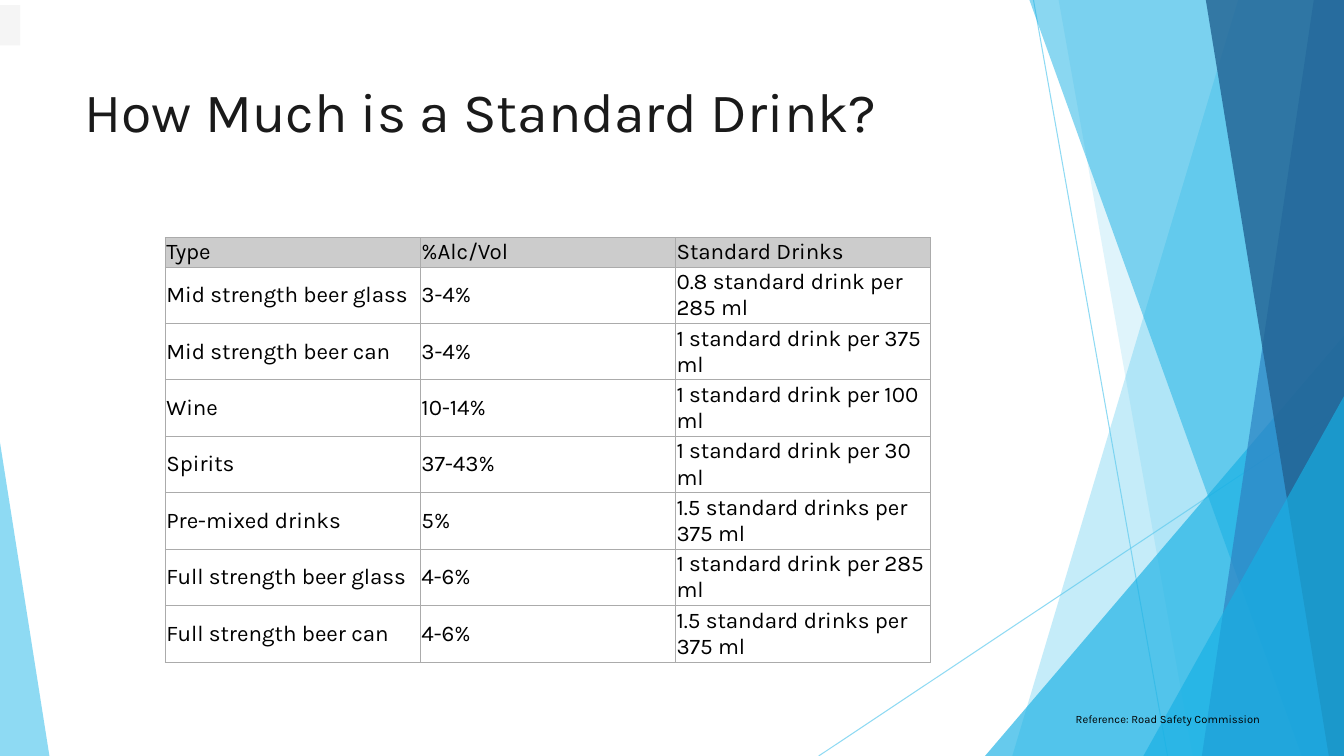
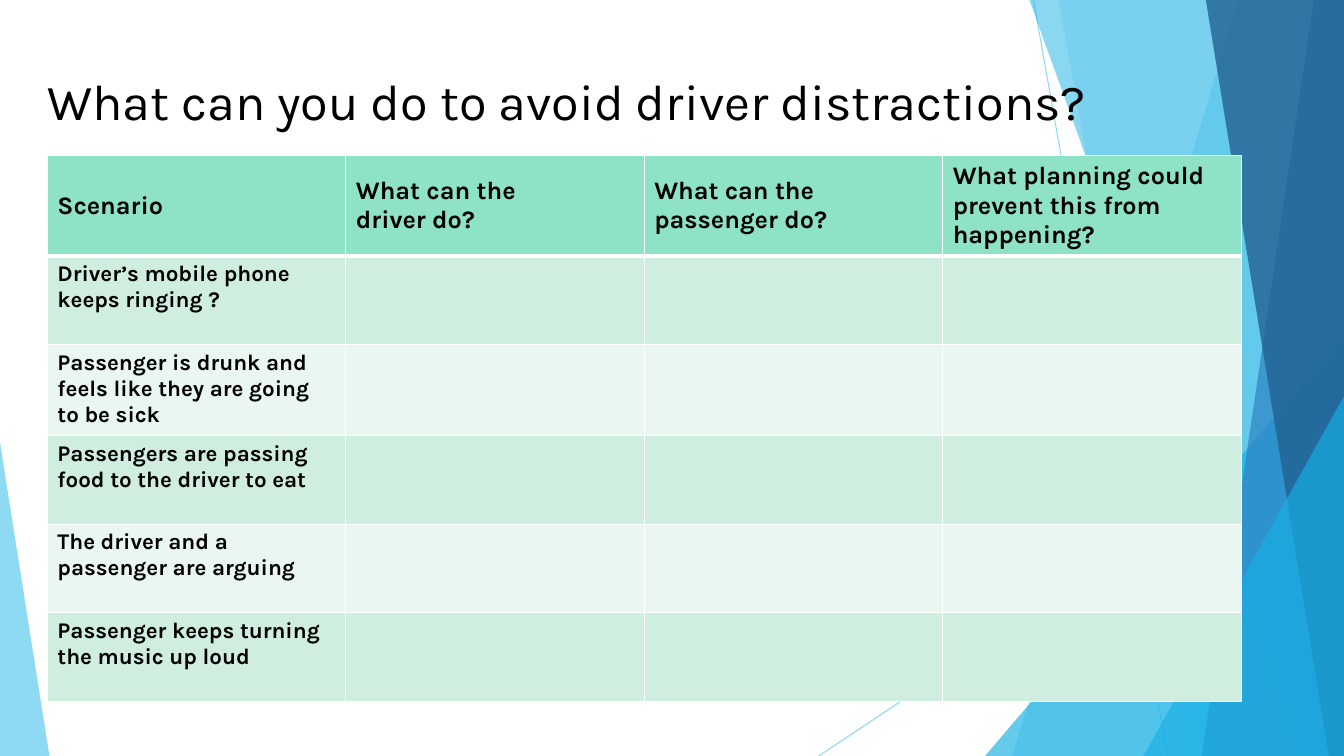
from lxml import etree
from pptx import Presentation
from pptx.dml.color import RGBColor
from pptx.enum import shapes, text
from pptx.oxml.ns import qn
from pptx.util import Inches, Pt

FONT = "Karla"
WIDTH, HEIGHT = 13.33, 7.5
COLORS = {
    "sky": "5FCBEF", "cyan": "17B0E4", "blue": "2E83C3", "navy": "226292",
    "black": "000000", "ink": "1A1A1A", "white": "FFFFFF", "tab": "F5F5F5",
    "grid": "ABABAB", "grey": "CCCCCC",
    "mint": "8EE3C7", "mint_mid": "CFEEE0", "mint_pale": "E9F7F0",
}

# Background, back to front
RAYS = [((10.25, 0), (11.58, HEIGHT)), ((WIDTH, 4.03), (8.12, HEIGHT))]
# ("band", top x, bottom x) reaches the right edge; ("triangle", left, top, width, apex)
FACETS = [
    (("band", 12.28, 10.04), "sky", 36),
    (("band", 10.5, 11.83), "sky", 20),
    (("triangle", 9.77, 3.33, 3.56, 1), "cyan", 66),
    (("band", 10.21, 12.91), "cyan", 50),
    (("band", 13.03, 11.92), "blue", 70),
    (("band", 11.96, 13.18), "navy", 80),
    (("triangle", 11.34, 3.93, 1.99, 1), "cyan", 66),
    (("triangle", 0, 4.39, 0.49, 0), "sky", 70),
]

DRINKS_TITLE = "How Much is a Standard Drink?"
DRINKS = [
    ("Type", "%Alc/Vol", "Standard Drinks"),
    ("Mid strength beer glass", "3-4%", "0.8 standard drink per 285 ml"),
    ("Mid strength beer can", "3-4%", "1 standard drink per 375 ml"),
    ("Wine", "10-14%", "1 standard drink per 100 ml"),
    ("Spirits", "37-43%", "1 standard drink per 30 ml"),
    ("Pre-mixed drinks", "5%", "1.5 standard drinks per 375 ml"),
    ("Full strength beer glass", "4-6%", "1 standard drink per 285 ml"),
    ("Full strength beer can", "4-6%", "1.5 standard drinks per 375 ml"),
]
REFERENCE = "Reference: Road Safety Commission"

DISTRACTIONS_TITLE = "What can you do to avoid driver distractions?"
QUESTIONS = ("Scenario", "What can the\ndriver do?", "What can the\npassenger do?",
             "What planning could prevent this from happening?")
SCENARIOS = [
    "Driver’s mobile phone keeps ringing ?",
    "Passenger is drunk and feels like they are going to be sick",
    "Passengers are passing food to the driver to eat",
    "The driver and a passenger are arguing",
    "Passenger keeps turning the music up loud",
]


def rgb(name):
    return RGBColor.from_string(COLORS[name])


def set_alpha(element, percent):
    color = next(element.iter(qn("a:srgbClr")))
    etree.SubElement(color, qn("a:alpha"), val=str(percent * 1000))


def paint(shape, color):
    shape.shadow.inherit = False
    shape.fill.solid()
    shape.fill.fore_color.rgb = rgb(color)
    shape.line.fill.background()


def write(frame, content, size, color="black", bold=False):
    """Fill a text frame, one paragraph for each line of content."""
    for number, line in enumerate(content.split("\n")):
        paragraph = frame.add_paragraph() if number else frame.paragraphs[0]
        run = paragraph.add_run()
        run.text = line
        run.font.name, run.font.size, run.font.bold = FONT, Pt(size), bold
        run.font.color.rgb = rgb(color)


def add_text(slide, box, content, size, color="black", anchor=text.MSO_ANCHOR.TOP):
    frame = slide.shapes.add_textbox(*map(Inches, box)).text_frame
    frame.word_wrap = True
    frame.vertical_anchor = anchor
    write(frame, content, size, color)


def add_facet(slide, outline, color, opacity):
    kind, *measures = outline
    if kind == "band":
        top_x, bottom_x = measures
        builder = slide.shapes.build_freeform(Inches(top_x), 0)
        corners = [(WIDTH, 0), (WIDTH, HEIGHT), (bottom_x, HEIGHT)]
        builder.add_line_segments([(Inches(x), Inches(y)) for x, y in corners], close=True)
        facet = builder.convert_to_shape()
    else:
        left, top, width, apex = measures
        facet = slide.shapes.add_shape(shapes.MSO_SHAPE.ISOSCELES_TRIANGLE,
                                       *map(Inches, (left, top, width, HEIGHT - top)))
        facet.adjustments[0] = apex
    paint(facet, color)
    set_alpha(facet.fill._xPr, opacity)


def new_slide(prs, title, title_box, size, color):
    """Add a slide with the faceted background and its title."""
    slide = prs.slides.add_slide(prs.slide_layouts[6])
    for start, end in RAYS:
        ray = slide.shapes.add_connector(shapes.MSO_CONNECTOR.STRAIGHT,
                                         *map(Inches, start + end))
        ray.line.width = Pt(0.75)
        ray.line.color.rgb = rgb("sky")
        properties = ray._element.spPr
        set_alpha(properties, 70)
        etree.SubElement(properties, qn("a:effectLst"))
    for facet in FACETS:
        add_facet(slide, *facet)
    add_text(slide, title_box, title, size, color, text.MSO_ANCHOR.MIDDLE)
    return slide


def set_borders(cell, color, widths):
    """Draw the left, right, top and bottom borders, widths in points."""
    properties = cell._tc.get_or_add_tcPr()
    for side, width in zip("LRTB", widths):
        line = etree.SubElement(properties, qn(f"a:ln{side}"), w=str(Pt(width)))
        fill = etree.SubElement(line, qn("a:solidFill"))
        etree.SubElement(fill, qn("a:srgbClr"), val=COLORS[color])


def add_grid(slide, corner, col_width, row_heights, rows, style_cell):
    """Add a plain table; style_cell(cell, row, content) dresses each cell."""
    columns = len(rows[0])
    table = slide.shapes.add_table(
        len(rows), columns, *map(Inches, corner),
        Inches(col_width * columns), Inches(sum(row_heights))).table
    table.first_row = table.horz_banding = False
    for column in table.columns:
        column.width = Inches(col_width)
    for row, (height, contents) in enumerate(zip(row_heights, rows)):
        table.rows[row].height = Inches(height)
        for col, content in enumerate(contents):
            style_cell(table.cell(row, col), row, content)


def fill_cell(cell, color):
    cell.fill.solid()
    cell.fill.fore_color.rgb = rgb(color)


def style_drink(cell, row, content):
    set_borders(cell, "grid", [0.75] * 4)
    fill_cell(cell, "white" if row else "grey")
    cell.margin_left = cell.margin_right = Inches(0.01)
    cell.margin_top = cell.margin_bottom = Inches(0.01)
    cell.vertical_anchor = text.MSO_ANCHOR.MIDDLE
    write(cell.text_frame, content, 16)


def style_scenario(cell, row, content):
    set_borders(cell, "white", (1, 1, 3 if row == 1 else 1, 1 if row else 3))
    fill_cell(cell, ("mint_mid" if row % 2 else "mint_pale") if row else "mint")
    cell.vertical_anchor = text.MSO_ANCHOR.TOP if row else text.MSO_ANCHOR.MIDDLE
    if content:
        write(cell.text_frame, content, 16 if row else 18, bold=True)


def build_drinks(prs):
    slide = new_slide(prs, DRINKS_TITLE, (0.74, 0.62, 9.4, 0.94), 39.6, "ink")
    heights = [0.29] + [0.56] * (len(DRINKS) - 1)
    add_grid(slide, (1.64, 2.36), 2.53, heights, DRINKS, style_drink)
    tab = slide.shapes.add_shape(shapes.MSO_SHAPE.RECTANGLE,
                                 *map(Inches, (0, 0.05, 0.2, 0.4)))
    paint(tab, "tab")
    add_text(slide, (10.57, 7.02, 2.32, 0.24), REFERENCE, 8)


def build_distractions(prs):
    slide = new_slide(prs, DISTRACTIONS_TITLE, (0.37, 0.57, 11.08, 0.85), 36, "black")
    answers = [""] * (len(QUESTIONS) - 1)
    rows = [QUESTIONS] + [[scenario] + answers for scenario in SCENARIOS]
    heights = [0.98] + [0.88] * len(SCENARIOS)
    add_grid(slide, (0.47, 1.54), 2.96, heights, rows, style_scenario)


def main():
    prs = Presentation()
    prs.slide_width, prs.slide_height = Inches(WIDTH), Inches(HEIGHT)
    build_drinks(prs)
    build_distractions(prs)
    prs.save("out.pptx")


if __name__ == "__main__":
    main()
